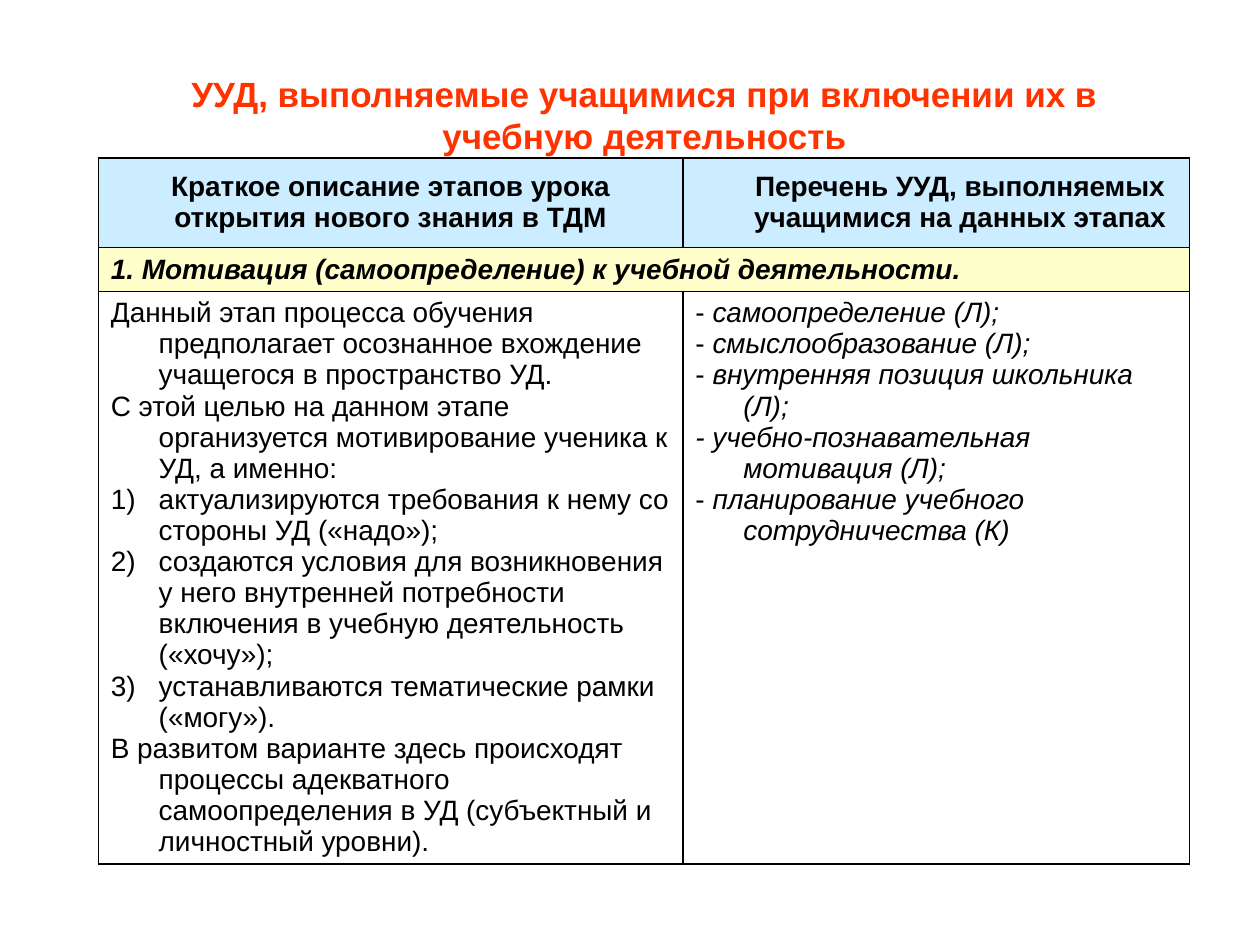
import lxml.etree
import pptx
import pptx.dml.color
import pptx.enum.text
import pptx.oxml.ns
import pptx.util

SLIDE_WIDTH, SLIDE_HEIGHT = 10, 7.5
HANGING = 0.38
STAGE_COLUMNS = (0.464, 0.402)
STAGE_ROWS = (0.095, 0.046, 0.6)
INK, HEADER_FILL, STAGE_FILL, BODY_FILL = "000000", "CCECFF", "FFFFCC", "FFFFFF"

TITLE = "УУД, выполняемые учащимися при включении их в учебную деятельность"
STAGE_HEADER = ["Краткое описание этапов урока", "открытия нового знания в ТДМ"]
ACTIONS_HEADER = "Перечень УУД, выполняемых учащимися на данных этапах"
STAGE_NAME = "1. Мотивация (самоопределение) к учебной деятельности."
STAGE_INTRO = [
    "Данный этап процесса обучения предполагает осознанное вхождение учащегося в пространство УД.",
    "С этой целью на данном этапе организуется мотивирование ученика к УД, а именно:",
]
STAGE_STEPS = [
    "актуализируются требования к нему со стороны УД («надо»);",
    "создаются условия для возникновения у него внутренней потребности "
    "включения в учебную деятельность («хочу»);",
    "устанавливаются тематические рамки («могу»).",
]
STAGE_OUTCOME = (
    "В развитом варианте здесь происходят процессы адекватного самоопределения "
    "в УД (субъектный и личностный уровни)."
)
ACTIONS = [
    "самоопределение (Л);",
    "смыслообразование (Л);",
    "внутренняя позиция школьника (Л);",
    "учебно-познавательная мотивация (Л);",
    "планирование учебного сотрудничества (К)",
]


def across(share):
    """Turn a share of the slide width into a length."""
    return pptx.util.Inches(share * SLIDE_WIDTH)


def down(share):
    """Turn a share of the slide height into a length."""
    return pptx.util.Inches(share * SLIDE_HEIGHT)


def color(value):
    """Turn a hex string into a colour."""
    return pptx.dml.color.RGBColor.from_string(value)


def write(paragraph, text, size=16, ink=INK, bold=False, italic=False, align="LEFT"):
    """Append formatted text to a paragraph."""
    paragraph.alignment = getattr(pptx.enum.text.PP_ALIGN, align)
    run = paragraph.add_run()
    run.text = text
    run.font.name = "Arial"
    run.font.size = pptx.util.Pt(size)
    run.font.bold = bold
    run.font.italic = italic
    run.font.color.rgb = color(ink)


def indent(paragraph, first=-HANGING, numbered=False):
    """Set the indents of a paragraph and its automatic number."""
    properties = paragraph._p.get_or_add_pPr()
    properties.set("marL", str(pptx.util.Inches(HANGING)))
    properties.set("indent", str(pptx.util.Inches(first)))
    if numbered:
        number = lxml.etree.SubElement(properties, pptx.oxml.ns.qn("a:buAutoNum"))
        number.set("type", "arabicParenR")


def next_paragraph(cell, **layout):
    """Return an indented paragraph at the end of a cell."""
    frame = cell.text_frame
    paragraph = frame.paragraphs[-1]
    if paragraph.runs:
        paragraph = frame.add_paragraph()
    indent(paragraph, **layout)
    return paragraph


def style_cell(cell, fill):
    """Give a cell thin black borders and a plain fill."""
    properties = cell._tc.get_or_add_tcPr()
    for side in ("a:lnL", "a:lnR", "a:lnT", "a:lnB"):
        border = lxml.etree.SubElement(properties, pptx.oxml.ns.qn(side))
        border.set("w", str(pptx.util.Pt(1)))
        paint = lxml.etree.SubElement(border, pptx.oxml.ns.qn("a:solidFill"))
        lxml.etree.SubElement(paint, pptx.oxml.ns.qn("a:srgbClr")).set("val", INK)
    cell.fill.solid()
    cell.fill.fore_color.rgb = color(fill)


def add_title(slide):
    """Place the heading in the title placeholder."""
    heading = slide.shapes.title
    heading.left, heading.top = across(0.106), down(0.07)
    heading.width, heading.height = across(0.811), down(0.102)
    frame = heading.text_frame
    frame.word_wrap = True
    frame.auto_size = pptx.enum.text.MSO_AUTO_SIZE.NONE
    frame.vertical_anchor = pptx.enum.text.MSO_ANCHOR.BOTTOM
    write(frame.paragraphs[0], TITLE, size=20, ink="FF3300", bold=True, align="CENTER")


def add_stage_table(slide):
    """Add the empty table of lesson stages."""
    table = slide.shapes.add_table(
        len(STAGE_ROWS), len(STAGE_COLUMNS), across(0.078), down(0.167),
        across(sum(STAGE_COLUMNS)), down(sum(STAGE_ROWS)),
    ).table
    table.first_row = table.horz_banding = False
    for column, share in zip(table.columns, STAGE_COLUMNS):
        column.width = across(share)
    for row, share, fill in zip(table.rows, STAGE_ROWS, (HEADER_FILL, STAGE_FILL, BODY_FILL)):
        row.height = down(share)
        for cell in row.cells:
            style_cell(cell, fill)
    table.cell(1, 0).merge(table.cell(1, 1))
    return table


def fill_headings(table):
    """Write the column headings and the stage name."""
    stage_heading, actions_heading = table.rows[0].cells
    for cell in (stage_heading, actions_heading):
        cell.vertical_anchor = pptx.enum.text.MSO_ANCHOR.MIDDLE
    for line in STAGE_HEADER:
        write(next_paragraph(stage_heading), line, bold=True, align="CENTER")
    write(next_paragraph(actions_heading, first=0), ACTIONS_HEADER, bold=True, align="CENTER")
    write(next_paragraph(table.cell(1, 0)), STAGE_NAME, bold=True, italic=True)


def fill_stage(table):
    """Write the stage description and its learning actions."""
    description, actions = table.rows[2].cells
    for sentence in STAGE_INTRO:
        write(next_paragraph(description), sentence)
    for step in STAGE_STEPS:
        write(next_paragraph(description, numbered=True), step)
    write(next_paragraph(description), STAGE_OUTCOME)
    for action in ACTIONS:
        entry = next_paragraph(actions)
        write(entry, "- ", italic=action.startswith("учебно"))
        write(entry, action, italic=True)


def main():
    """Build and save the slide."""
    presentation = pptx.Presentation()
    presentation.slide_width = across(1)
    presentation.slide_height = down(1)
    slide = presentation.slides.add_slide(presentation.slide_layouts[5])
    add_title(slide)
    table = add_stage_table(slide)
    fill_headings(table)
    fill_stage(table)
    presentation.save("out.pptx")


if __name__ == "__main__":
    main()
